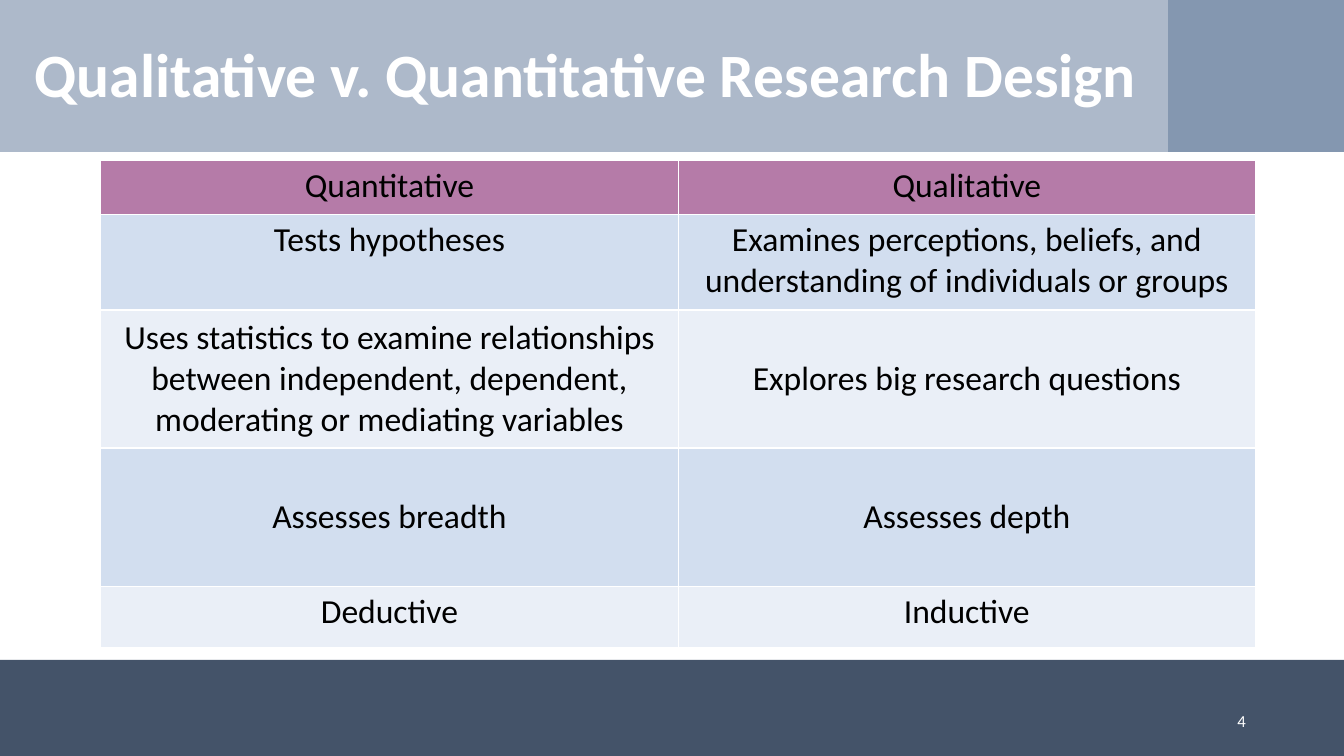
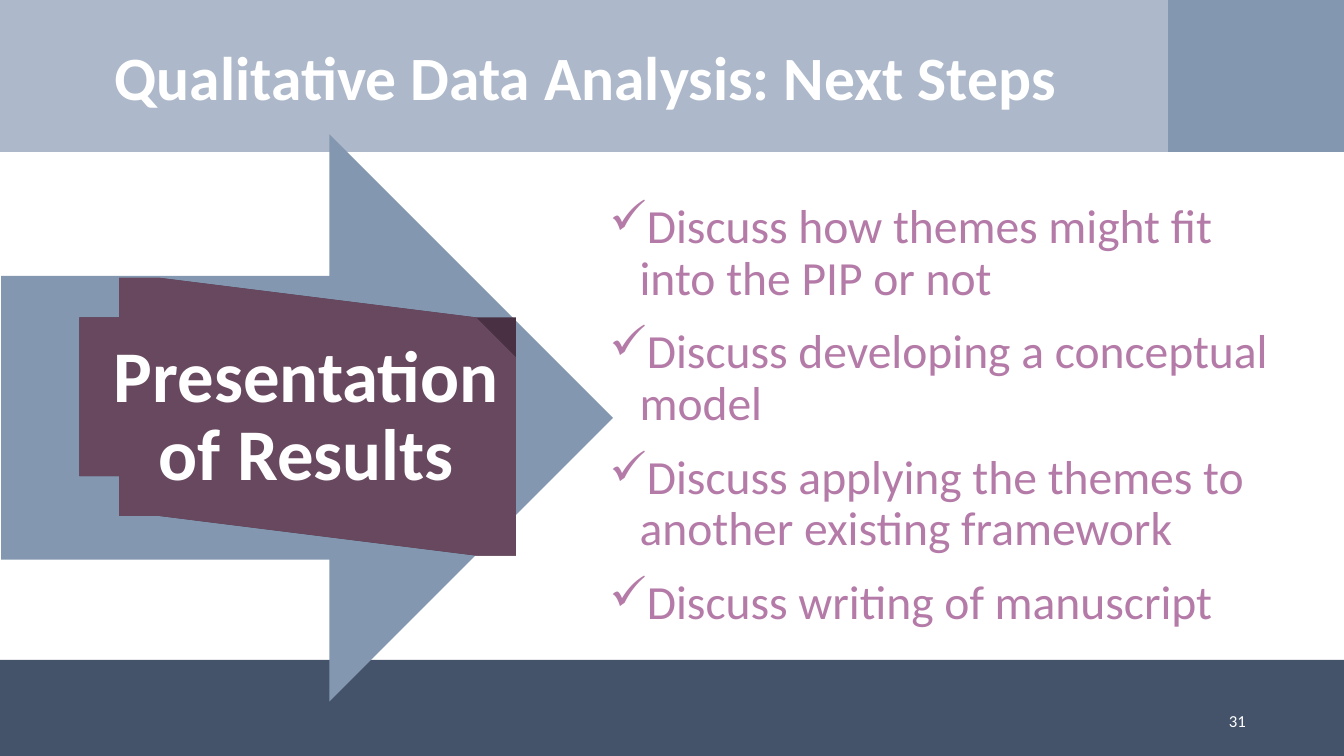
from lxml.etree import SubElement
from pptx import Presentation
from pptx.dml.color import RGBColor
from pptx.enum.shapes import MSO_SHAPE
from pptx.enum.text import MSO_ANCHOR, PP_ALIGN
from pptx.oxml.ns import qn
from pptx.util import Cm, Pt

FONT = "Calibri"
WHITE, BLACK = "FFFFFF", "000000"
PALE, NAVY, STEEL = "ADB9CA", "445369", "8497B0"
MAUVE, PLUM, DARK_PLUM = "B57BA8", "68485F", "493143"
ROW_FILLS = ("D2DEEF", "EAEFF7")
WIDTH, HEIGHT = 33.87, 19.05

COMPARISON = [
    ("Quantitative", "Qualitative"),
    ("Tests hypotheses",
     "Examines perceptions, beliefs, and understanding of individuals or groups"),
    ("Uses statistics to examine relationships between independent, dependent, "
     "moderating or mediating variables", "Explores big research questions"),
    ("Assesses breadth", "Assesses depth"),
    ("Deductive", "Inductive"),
]
ROW_HEIGHTS = (1.35, 2.41, 3.48, 3.48, 1.55)
CENTRED_ROWS = (2, 3)
NEXT_STEPS = [
    "Discuss how themes might fit into the PIP or not",
    "Discuss developing a conceptual model",
    "Discuss applying the themes to another existing framework",
    "Discuss writing of manuscript",
]
PLAQUE_CORNERS = [(2.49, 7.03), (13.13, 8.54), (12.98, 14.04), (2.32, 12.45)]
PLAQUE_DEPTH = (0.38, -0.3)


def rgb(color):
    """Turn a hex string into a colour."""
    return RGBColor.from_string(color)


def paint(sp, color):
    """Give a shape a flat fill without line or shadow."""
    sp.shadow.inherit = False
    sp.fill.solid()
    sp.fill.fore_color.rgb = rgb(color)
    sp.line.fill.background()


def style(p, size, color, bold=False, align=PP_ALIGN.LEFT):
    """Format a paragraph and its runs."""
    p.alignment = align
    for r in p.runs:
        r.font.name = FONT
        r.font.size = Pt(size)
        r.font.bold = bold
        r.font.color.rgb = rgb(color)


def add_block(s, box, color, kind=MSO_SHAPE.RECTANGLE):
    """Add a flat preset shape."""
    paint(s.shapes.add_shape(kind, *map(Cm, box)), color)


def add_text(s, box, text, size, color, bold=False, align=PP_ALIGN.CENTER,
             spacing=None):
    """Add a wrapped, vertically centred line of text."""
    tf = s.shapes.add_textbox(*map(Cm, box)).text_frame
    tf.word_wrap = True
    tf.vertical_anchor = MSO_ANCHOR.MIDDLE
    p = tf.paragraphs[0]
    p.text = text
    p.line_spacing = spacing
    style(p, size, color, bold, align)


def add_table(s, left, top, width, rows):
    """Add a two-column comparison with banded rows."""
    frame = s.shapes.add_table(len(rows), len(rows[0]), Cm(left), Cm(top),
                               Cm(width), Cm(sum(ROW_HEIGHTS)))
    table = frame.table
    for i, (texts, height) in enumerate(zip(rows, ROW_HEIGHTS)):
        table.rows[i].height = Cm(height)
        for cell, text in zip(table.rows[i].cells, texts):
            cell.text = text
            cell.fill.solid()
            cell.fill.fore_color.rgb = rgb(ROW_FILLS[(i - 1) % 2] if i else MAUVE)
            if i in CENTRED_ROWS:
                cell.vertical_anchor = MSO_ANCHOR.MIDDLE
            style(cell.text_frame.paragraphs[0], 24, BLACK, align=PP_ALIGN.CENTER)


def add_checklist(s, box, items):
    """Add a list with check mark bullets."""
    tf = s.shapes.add_textbox(*map(Cm, box)).text_frame
    tf.word_wrap = True
    for i, item in enumerate(items):
        p = tf.add_paragraph() if i else tf.paragraphs[0]
        p.text = item
        pPr = p._p.get_or_add_pPr()
        pPr.set("marL", str(Cm(0.76)))
        pPr.set("indent", str(-Cm(0.76)))
        color = SubElement(pPr, qn("a:buClr"))
        SubElement(color, qn("a:srgbClr"), val=MAUVE)
        SubElement(pPr, qn("a:buChar"), char="✓")
        p.line_spacing = 0.9
        p.space_before = Pt(10 if i else 0)
        p.space_after = Pt(6)
        style(p, 34, MAUVE)


def round_corners(corners, radius=1.2, steps=10):
    """Return the points of a clockwise polygon with its corners rounded."""
    points = []
    for i, (x, y) in enumerate(corners):
        ends = []
        for nx, ny in (corners[i - 1], corners[(i + 1) % len(corners)]):
            k = radius / ((nx - x) ** 2 + (ny - y) ** 2) ** 0.5
            ends.append((x + k * (nx - x), y + k * (ny - y)))
        (ax, ay), (bx, by) = ends
        for t in (n / steps for n in range(steps + 1)):
            u = 1 - t
            points.append((u * u * ax + 2 * u * t * x + t * t * bx,
                           u * u * ay + 2 * u * t * y + t * t * by))
    return points


def extrude(points, depth):
    """Return the outline swept by a clockwise polygon moved by depth."""
    dx, dy = depth
    swept = []
    for i, (x, y) in enumerate(points):
        px, py = points[i - 1]
        nx, ny = points[(i + 1) % len(points)]
        facing = (ny - py) * dx - (nx - px) * dy > 0
        swept.append((x + dx, y + dy) if facing else (x, y))
    return swept


def add_polygon(s, points, color):
    """Add a filled outline given in centimetres."""
    builder = s.shapes.build_freeform(*points[0], scale=Cm(1))
    builder.add_line_segments(points[1:])
    paint(builder.convert_to_shape(), color)


def add_plaque(s, text):
    """Add a tilted solid plaque with large text."""
    face = round_corners(PLAQUE_CORNERS)
    add_polygon(s, extrude(face, PLAQUE_DEPTH), DARK_PLUM)
    add_polygon(s, face, PLUM)
    add_text(s, (2.31, 7.95, 10.82, 5.16), text, 52, WHITE, True, spacing=0.9)


def add_slide(prs, title, title_top, number):
    """Add a slide with the shared bands, title and number."""
    s = prs.slides.add_slide(prs.slide_layouts[6])
    add_block(s, (0, 0, WIDTH, 3.83), PALE)
    add_block(s, (0, 16.63, WIDTH, HEIGHT - 16.63), NAVY)
    add_block(s, (29.44, 0, WIDTH - 29.44, 3.83), STEEL)
    add_text(s, (0, title_top, 29.54, 2.03), title, 44, WHITE, True,
             spacing=Pt(46))
    add_text(s, (29, 17.65, 2.65, 1.02), number, 12, WHITE, align=PP_ALIGN.RIGHT)
    return s


def main():
    """Build and save the presentation."""
    prs = Presentation()
    prs.slide_width, prs.slide_height = Cm(WIDTH), Cm(HEIGHT)

    s = add_slide(prs, "Qualitative v. Quantitative Research Design", 0.94, "4")
    add_table(s, 2.54, 4.05, 29.1, COMPARISON)

    s = add_slide(prs, "Qualitative Data Analysis: Next Steps", 1.02, "31")
    add_checklist(s, (15.11, 4.98, 17.37, 11.1), NEXT_STEPS)
    add_block(s, (0.03, 3.38, 15.42, 14.3), STEEL, MSO_SHAPE.RIGHT_ARROW)
    add_plaque(s, "Presentation of Results")

    prs.save("out.pptx")


if __name__ == "__main__":
    main()
